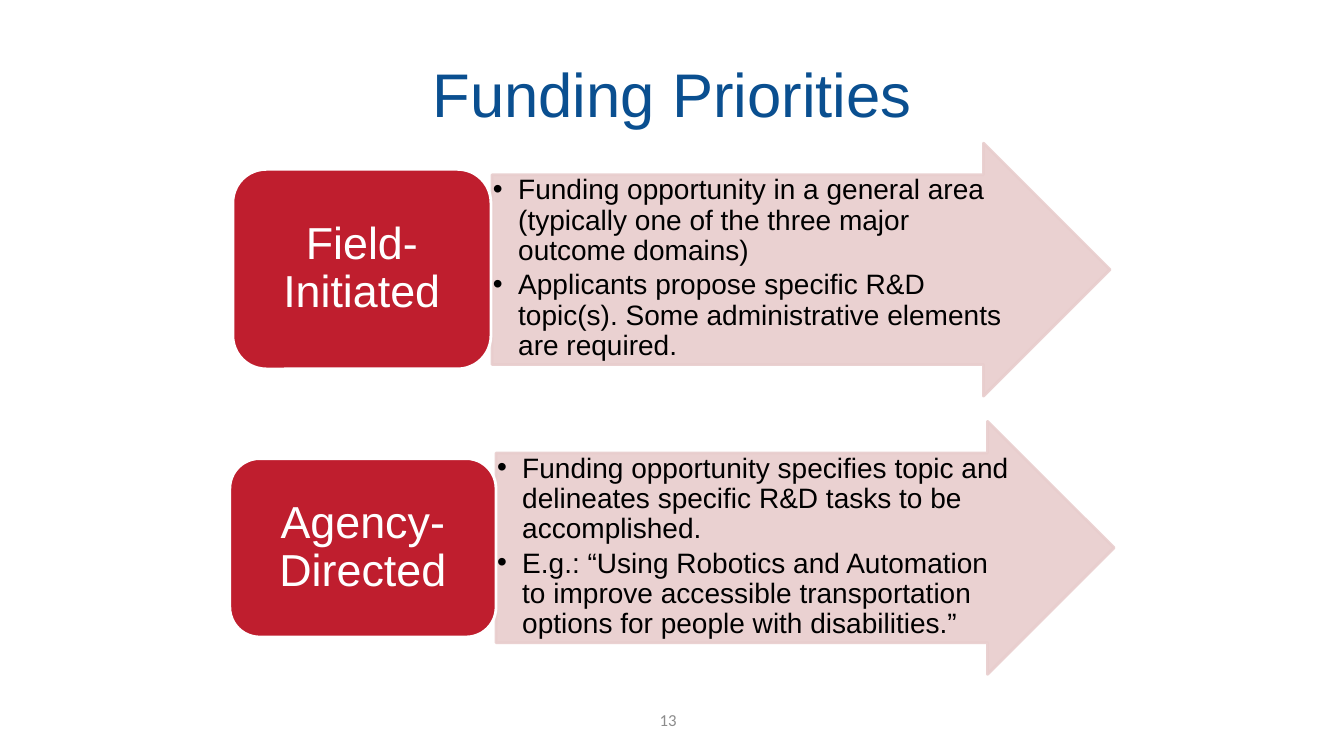
"""Build the Funding Priorities slide: two labelled arrows with bullets."""
from lxml import etree
from pptx import Presentation
from pptx.dml.color import RGBColor
from pptx.enum import shapes, text
from pptx.oxml import ns
from pptx.util import Inches, Pt


def paint(color, value, alpha=None):
    color.rgb = RGBColor.from_string(value)
    if alpha:
        clr = color._xFill.find(ns.qn("a:srgbClr"))
        etree.SubElement(clr, ns.qn("a:alpha"), val=str(alpha * 1000))


def add_run(p, words, size, value, font="Arial"):
    r = p.add_run()
    r.text = words
    r.font.size = Pt(size)
    r.font.name = font
    paint(r.font.color, value)


prs = Presentation()
prs.slide_width, prs.slide_height = Inches(13.33), Inches(7.5)
s = prs.slides.add_slide(prs.slide_layouts[5])

title = s.shapes.title
title.left, title.top = Inches(0.67), Inches(0.3)
title.width, title.height = Inches(12), Inches(1.25)
title.text_frame.vertical_anchor = text.MSO_ANCHOR.MIDDLE
p = title.text_frame.paragraphs[0]
p.alignment = text.PP_ALIGN.CENTER
add_run(p, "Funding Priorities", 44, "0A4F90")

priorities = [
    ("Field-Initiated", (2.31, 1.68, 2.56, 1.98), (4.88, 1.42), [
        "Funding opportunity in a general area (typically one of the three major outcome domains)",
        "Applicants propose specific R&D topic(s). Some administrative elements are required."]),
    ("Agency- Directed", (2.28, 4.55, 2.64, 1.77), (4.92, 4.18), [
        "Funding opportunity specifies topic and delineates specific R&D tasks to be accomplished.",
        "E.g.: “Using Robotics and Automation to improve accessible transportation options "
        "for people with disabilities.”"]),
]
for label, label_box, arrow_pos, bullets in priorities:
    arrow_box = (*arrow_pos, 6.13, 2.51)
    for kind, box, fill, line, alpha, insets, anchor in (
        (shapes.MSO_SHAPE.RIGHT_ARROW, arrow_box, "E8CDCD", "E8CDCD", 90,
         (0.01, 0.01), text.MSO_ANCHOR.TOP),
        (shapes.MSO_SHAPE.ROUNDED_RECTANGLE, label_box, "BF1E2E", "FFFFFF", None,
         (0.13, 0.07), text.MSO_ANCHOR.MIDDLE),
    ):
        sp = s.shapes.add_shape(kind, *map(Inches, box))
        sp.shadow.inherit = False
        sp.fill.solid()
        paint(sp.fill.fore_color, fill, alpha)
        sp.line.width = Pt(2)
        sp.line.fill.solid()
        paint(sp.line.fill.fore_color, line, alpha)
        tf = sp.text_frame
        tf.word_wrap = True
        tf.vertical_anchor = anchor
        tf.margin_left = tf.margin_right = Inches(insets[0])
        tf.margin_top = tf.margin_bottom = Inches(insets[1])
        if kind == shapes.MSO_SHAPE.RIGHT_ARROW:
            sp.adjustments[0], sp.adjustments[1] = 0.75, 0.5
            for i, bullet in enumerate(bullets):
                p = tf.add_paragraph() if i else tf.paragraphs[0]
                p.level = 1
                p.alignment = text.PP_ALIGN.LEFT
                p.line_spacing = 0.9
                p.space_after = Pt(3)
                pPr = p._p.get_or_add_pPr()
                pPr.set("marL", str(Inches(0.25)))
                pPr.set("indent", str(-Inches(0.25)))
                etree.SubElement(pPr, ns.qn("a:buFont"), typeface="Arial")
                etree.SubElement(pPr, ns.qn("a:buChar"), char="•")
                add_run(p, bullet, 20, "000000")
        else:
            p = tf.paragraphs[0]
            p.alignment = text.PP_ALIGN.CENTER
            p.line_spacing = 0.9
            add_run(p, label, 32, "FFFFFF")

number = s.shapes.add_textbox(Inches(6.36), Inches(6.94), Inches(0.45), Inches(0.4))
tf = number.text_frame
tf.word_wrap = True
tf.vertical_anchor = text.MSO_ANCHOR.MIDDLE
p = tf.paragraphs[0]
p.alignment = text.PP_ALIGN.RIGHT
add_run(p, "13", 12, "8C8C8C", "Calibri")

prs.save("out.pptx")
